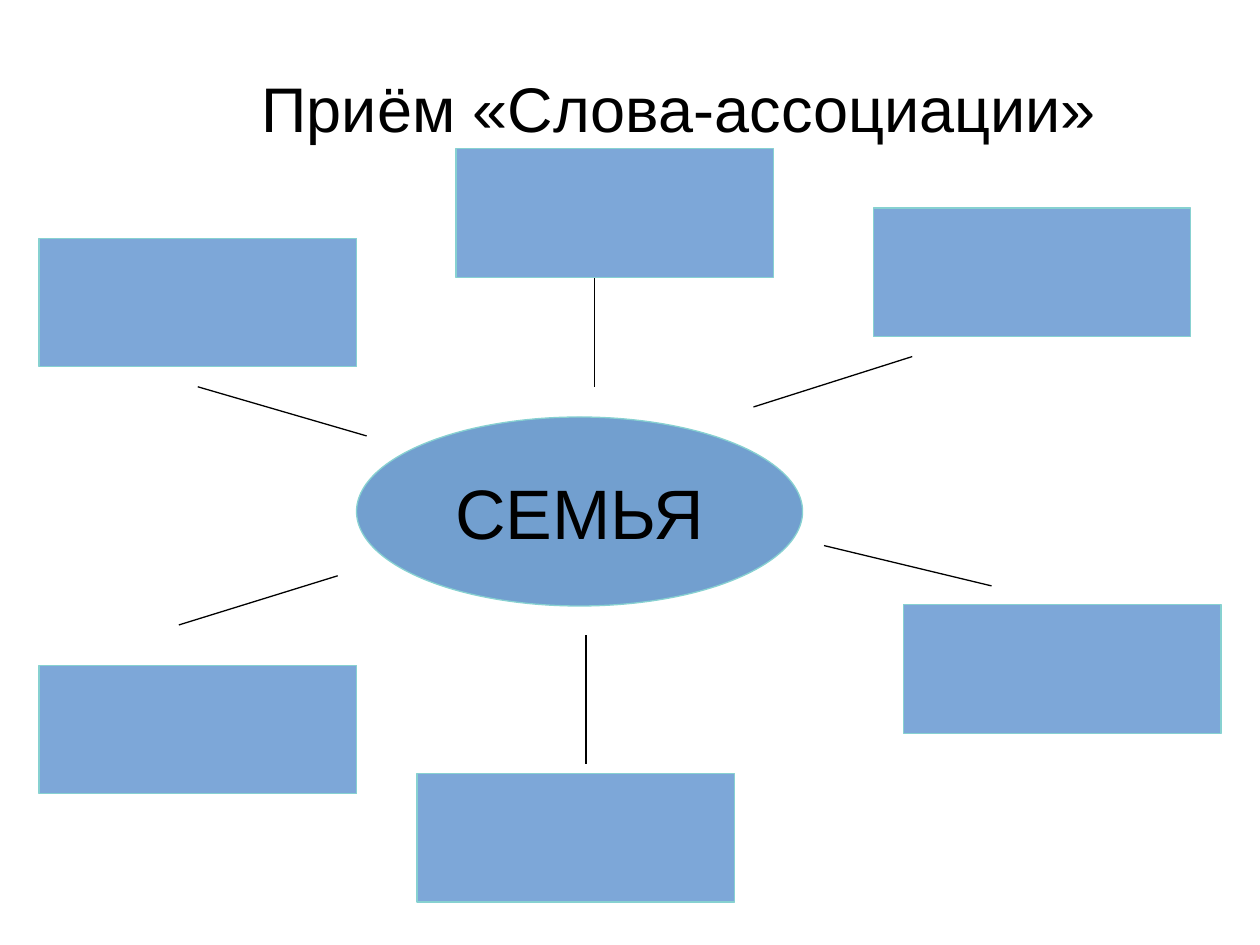
from dataclasses import dataclass

from lxml import etree
from pptx import Presentation
from pptx.dml.color import RGBColor
from pptx.enum import shapes, text
from pptx.oxml.ns import qn
from pptx.util import Inches, Pt


@dataclass(frozen=True)
class Theme:
    font: str = "Arial"
    ink: RGBColor = RGBColor(0, 0, 0)
    hub: RGBColor = RGBColor(0x72, 0x9F, 0xCF)
    box: RGBColor = RGBColor(0x7D, 0xA7, 0xD8)
    edge: RGBColor = RGBColor(0x87, 0xD1, 0xD1)
    line: Pt = Pt(0.75)
    head: Pt = Pt(36)
    word: Pt = Pt(40)


theme = Theme()


def write(frame, words, size):
    frame.vertical_anchor = text.MSO_ANCHOR.MIDDLE
    para = frame.paragraphs[0]
    para.alignment = text.PP_ALIGN.CENTER
    run = para.add_run()
    run.text = words
    run.font.name = theme.font
    run.font.size = size
    run.font.color.rgb = theme.ink


def draw(kind, place, fill):
    """Add a filled shape with the shared edge and no shadow."""
    shape = slide.shapes.add_shape(kind, *map(Inches, place))
    shape.shadow.inherit = False
    shape.fill.solid()
    shape.fill.fore_color.rgb = fill
    shape.line.color.rgb = theme.edge
    shape.line.width = theme.line
    return shape


deck = Presentation()
deck.slide_width, deck.slide_height = Inches(10), Inches(7.5)
slide = deck.slides.add_slide(deck.slide_layouts[5])

title = slide.shapes.title
title.left, title.top = Inches(1.65), Inches(0.52)
title.width, title.height = Inches(7.48), Inches(0.66)
title.text_frame.auto_size = text.MSO_AUTO_SIZE.NONE
write(title.text_frame, "Приём «Слова-ассоциации»", theme.head)

hub = draw(shapes.MSO_SHAPE.OVAL, (2.83, 3.31, 3.54, 1.5), theme.hub)
hub.text_frame.word_wrap = False
write(hub.text_frame, "СЕМЬЯ", theme.word)

# Each branch: left and top of its box, then the two ends of its line
branches = [
    (6.93, 1.65, 5.98, 3.23, 7.24, 2.83),
    (7.17, 4.80, 6.54, 4.33, 7.87, 4.65),
    (3.62, 1.18, 4.72, 3.07, 4.72, 2.05),
    (3.31, 6.14, 4.65, 5.04, 4.65, 6.06),
    (0.31, 1.89, 1.57, 3.07, 2.91, 3.46),
    (0.31, 5.28, 1.42, 4.96, 2.68, 4.57),
]
wide, high = 2.52, 1.02

for left, top, *ends in branches:
    link = slide.shapes.add_connector(
        shapes.MSO_CONNECTOR.STRAIGHT, *map(Inches, ends))
    link.line.color.rgb = theme.ink
    link.line.width = theme.line
    etree.SubElement(link._element.spPr, qn("a:effectLst"))
    draw(shapes.MSO_SHAPE.RECTANGLE, (left, top, wide, high), theme.box)

deck.save("out.pptx")
